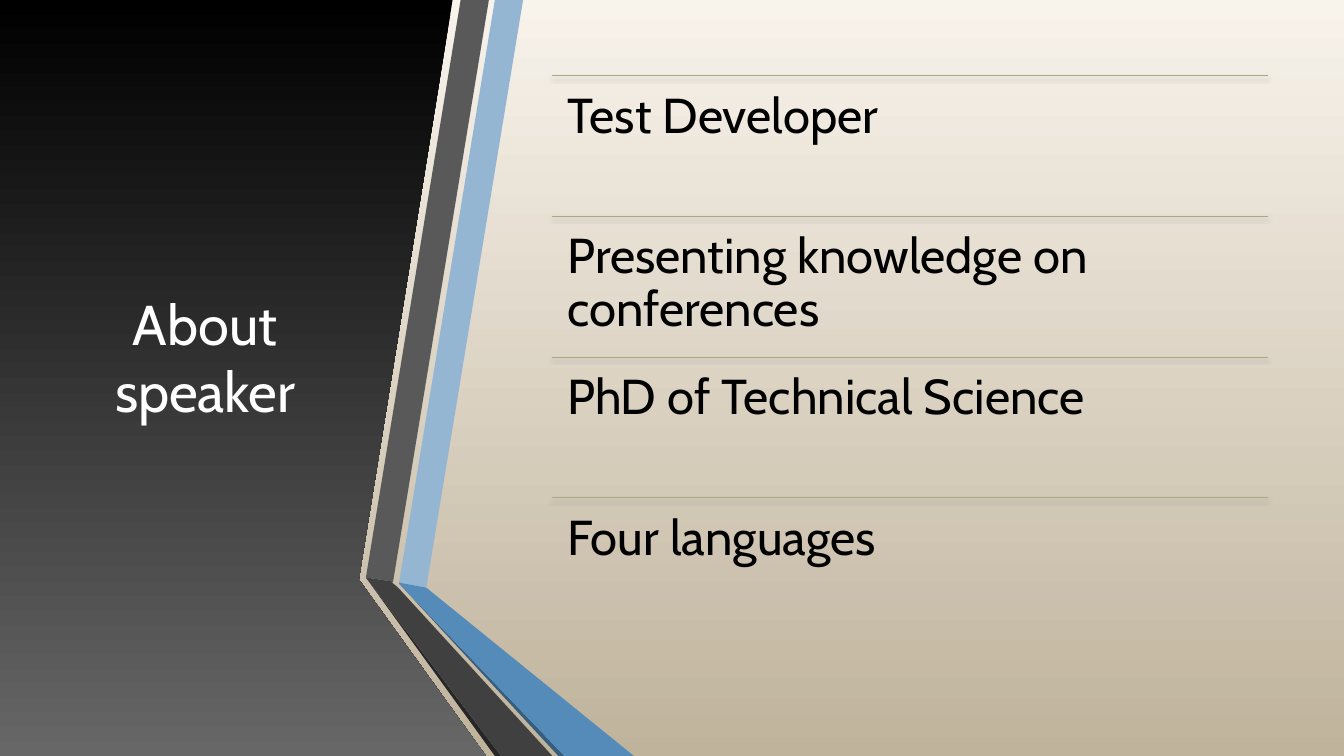
import dataclasses
import typing

import lxml.etree
import pptx
import pptx.dml.color
import pptx.dml.fill
import pptx.enum.shapes
import pptx.enum.text
import pptx.oxml.ns
import pptx.shapes.autoshape
import pptx.shapes.shapetree
import pptx.util

# Square grid: 80 columns by 45 rows fill the slide
COLUMNS, ROWS = 80, 45
CELL = pptx.util.Inches(7.5) // ROWS

FONT = "Cabin"
COLORS = {
    "cream": "F8F3EB",
    "sand": "BFB39C",
    "black": "000000",
    "white": "FFFFFF",
    "panel gray": "676767",
    "light blue": "94B6D2",
    "blue": "558BB8",
    "dark blue": "355D7E",
    "gray": "595959",
    "dark gray": "404040",
    "deep gray": "262626",
    "olive": "A5AB81",
}

Shapes = typing.Union[pptx.shapes.shapetree.SlideShapes, pptx.shapes.shapetree.GroupShapes]
Point = tuple[float, float]


@dataclasses.dataclass(frozen=True)
class Box:
    column: float
    row: float
    columns: float
    rows: float

    def lengths(self) -> list[int]:
        return [cells(value) for value in dataclasses.astuple(self)]


@dataclasses.dataclass(frozen=True)
class Band:
    color: str
    points: list[Point]


PANEL = [(0, 0), (26.94, 0), (21.36, 34.5), (28.92, 45), (0, 45)]
BANDS = [
    Band("light blue", [(23.76, 34.68), (25.38, 34.98), (31.14, 0), (29.46, 0)]),
    Band("gray", [(29.1, 0), (27.42, 0), (21.78, 34.38), (23.4, 34.62)]),
    Band("deep gray", [(21.78, 34.38), (29.46, 45), (29.82, 45)]),
    Band("dark blue", [(23.76, 34.74), (33.24, 45), (33.6, 45)]),
    Band("blue", [(23.76, 34.74), (33.6, 45), (37.74, 45), (25.38, 34.98), (23.76, 34.68)]),
    Band("dark gray", [(32.88, 45), (23.7, 34.98), (23.34, 34.68), (23.4, 34.62),
                       (21.78, 34.38), (29.82, 45)]),
]
TITLE = Box(3.54, 4.5, 17.34, 33.48)
FACTS = ["Test Developer", "Presenting knowledge on conferences",
         "PhD of Technical Science", "Four languages"]
FIRST_FACT = Box(32.88, 4.5, 42.6, 8.38)


def cells(count: float) -> int:
    return round(count * CELL)


def rgb(name: str) -> pptx.dml.color.RGBColor:
    return pptx.dml.color.RGBColor.from_string(COLORS[name])


def fill_downward(fill: pptx.dml.fill.FillFormat, top: str, bottom: str) -> None:
    fill.gradient()
    fill.gradient_angle = 270
    for stop, color in zip(fill.gradient_stops, (top, bottom)):
        stop.color.rgb = rgb(color)


def add_outline(shapes: Shapes, points: list[Point]) -> pptx.shapes.autoshape.Shape:
    corners = [(cells(column), cells(row)) for column, row in points]
    builder = shapes.build_freeform(*corners[0])
    builder.add_line_segments(corners[1:], close=True)
    shape = builder.convert_to_shape()
    shape.shadow.inherit = False
    shape.line.fill.background()
    return shape


def add_text(shapes: Shapes, text: str, box: Box, *, size: float, color: str,
             align: pptx.enum.text.PP_ALIGN = pptx.enum.text.PP_ALIGN.LEFT,
             anchor: pptx.enum.text.MSO_ANCHOR = pptx.enum.text.MSO_ANCHOR.TOP,
             inset: float = 0.6, line_spacing: float = 1.0) -> None:
    frame = shapes.add_textbox(*box.lengths()).text_frame
    frame.word_wrap = True
    frame.vertical_anchor = anchor
    frame.margin_left = frame.margin_right = cells(inset)
    frame.margin_top = frame.margin_bottom = cells(inset)
    paragraph = frame.paragraphs[0]
    paragraph.alignment = align
    paragraph.line_spacing = line_spacing
    run = paragraph.add_run()
    run.text = text
    run.font.name = FONT
    run.font.size = pptx.util.Pt(size)
    run.font.color.rgb = rgb(color)


def add_rule(shapes: Shapes, box: Box) -> None:
    left, top, width, _ = box.lengths()
    rule = shapes.add_connector(pptx.enum.shapes.MSO_CONNECTOR.STRAIGHT,
                                left, top, left + width, top)
    rule.line.color.rgb = rgb("olive")
    rule.line.width = pptx.util.Pt(0.75)
    # Soft shadow straight below the rule
    name = pptx.oxml.ns.qn
    properties = rule.line._get_or_add_ln().getparent()
    effects = lxml.etree.SubElement(properties, name("a:effectLst"))
    shadow = lxml.etree.SubElement(
        effects, name("a:outerShdw"), blurRad=str(pptx.util.Pt(3)),
        dist=str(pptx.util.Pt(2)), dir="5400000", rotWithShape="0")
    tint = lxml.etree.SubElement(shadow, name("a:srgbClr"), val=COLORS["black"])
    lxml.etree.SubElement(tint, name("a:alpha"), val="64000")


def main() -> None:
    presentation = pptx.Presentation()
    presentation.slide_width = cells(COLUMNS)
    presentation.slide_height = cells(ROWS)
    slide = presentation.slides.add_slide(presentation.slide_layouts[6])

    # Backdrop
    fill_downward(slide.background.fill, "cream", "sand")
    backdrop = slide.shapes.add_shape(pptx.enum.shapes.MSO_SHAPE.RECTANGLE,
                                      *Box(0, 0, COLUMNS, ROWS).lengths())
    backdrop.shadow.inherit = False
    backdrop.line.fill.background()
    fill_downward(backdrop.fill, "cream", "sand")

    # Dark panel and folded ribbon
    panel = add_outline(slide.shapes, PANEL)
    fill_downward(panel.fill, "black", "panel gray")
    ribbon = slide.shapes.add_group_shape()
    for band in BANDS:
        shape = add_outline(ribbon.shapes, band.points)
        shape.fill.solid()
        shape.fill.fore_color.rgb = rgb(band.color)

    # Title
    add_text(slide.shapes, "About speaker", TITLE, size=40, color="white",
             align=pptx.enum.text.PP_ALIGN.CENTER,
             anchor=pptx.enum.text.MSO_ANCHOR.MIDDLE)

    # Facts, each under a rule
    facts = slide.shapes.add_group_shape()
    for index, fact in enumerate(FACTS):
        box = dataclasses.replace(FIRST_FACT, row=FIRST_FACT.row + index * FIRST_FACT.rows)
        add_rule(facts.shapes, box)
        add_text(facts.shapes, fact, box, size=35, color="black",
                 inset=0.9, line_spacing=0.9)

    presentation.save("out.pptx")


if __name__ == "__main__":
    main()
